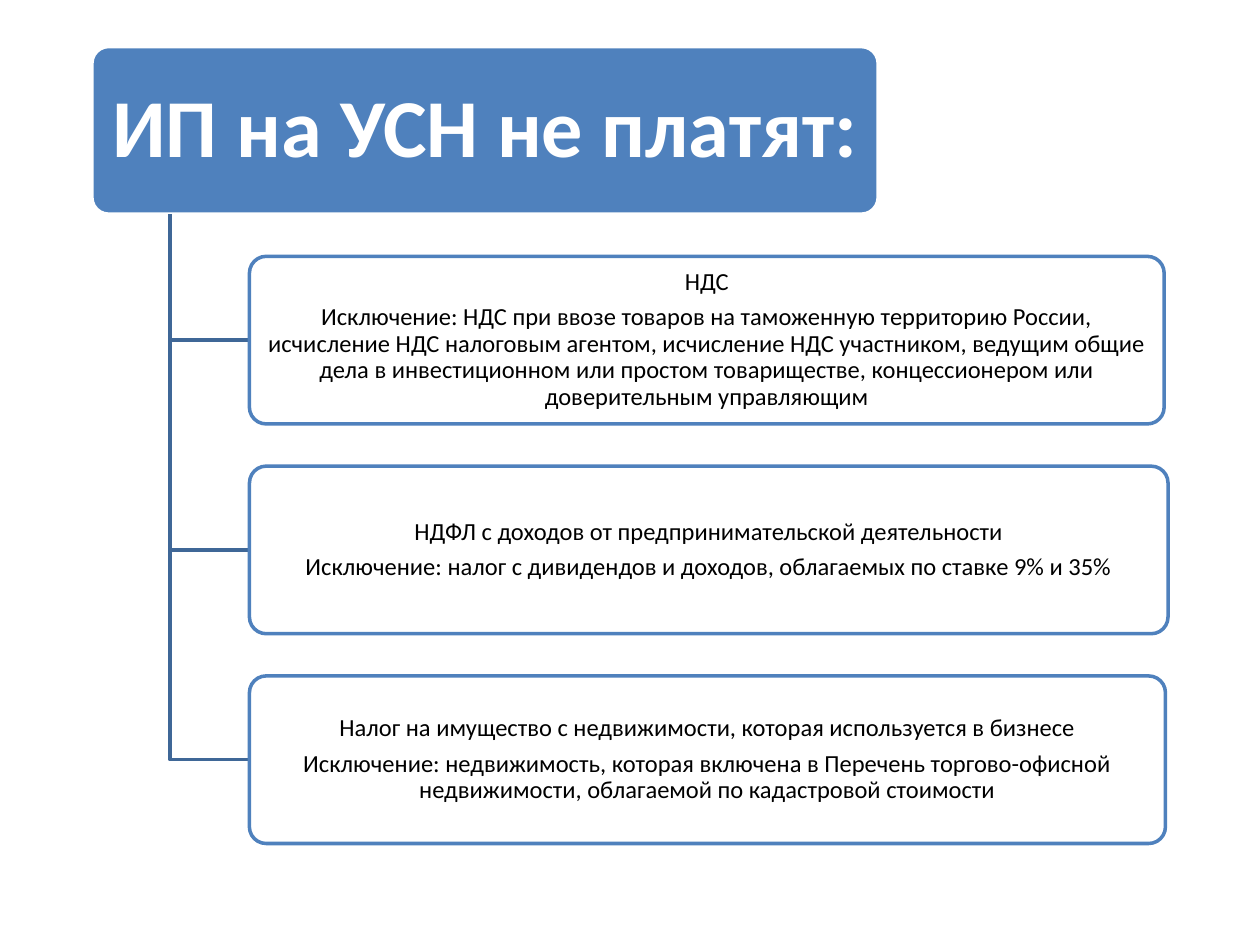
from pptx import Presentation
from pptx.dml.color import RGBColor
from pptx.enum.shapes import MSO_SHAPE
from pptx.enum.text import MSO_ANCHOR, MSO_AUTO_SIZE, PP_ALIGN
from pptx.util import Inches, Pt

BLUE = RGBColor(0x4F, 0x81, 0xBD)
DARK_BLUE = RGBColor(0x3F, 0x67, 0x97)
WHITE = RGBColor(0xFF, 0xFF, 0xFF)
BLACK = RGBColor(0, 0, 0)

HEADER_LEFT, HEADER_TOP, HEADER_WIDTH = 0.73, 0.37, 6.24
CARD_HEIGHT = 1.33
CARD_STEP = 1.665
CARD_LEFT = 1.98
TRUNK_LEFT = 1.35
TEXT_GAP = 0.04

TAXES = [
    (7.26, "НДС",
     "Исключение: НДС при ввозе товаров на таможенную территорию России, "
     "исчисление НДС налоговым агентом, исчисление НДС участником, ведущим общие "
     "дела в инвестиционном или простом товариществе, концессионером или "
     "доверительным управляющим"),
    (7.29, "НДФЛ с доходов от предпринимательской деятельности",
     "Исключение: налог с дивидендов и доходов, облагаемых по ставке 9% и 35%"),
    (7.27, "Налог на имущество с недвижимости, которая используется в бизнесе",
     "Исключение: недвижимость, которая включена в Перечень торгово-офисной "
     "недвижимости, облагаемой по кадастровой стоимости"),
]


def write_text(frame, lines, size, color, bold=False, inset_x=0.03, inset_y=0.02):
    frame.word_wrap = True
    frame.auto_size = MSO_AUTO_SIZE.NONE
    frame.vertical_anchor = MSO_ANCHOR.MIDDLE
    frame.margin_left = frame.margin_right = Inches(inset_x)
    frame.margin_top = frame.margin_bottom = Inches(inset_y)
    for index, line in enumerate(lines):
        para = frame.add_paragraph() if index else frame.paragraphs[0]
        para.alignment = PP_ALIGN.CENTER
        para.line_spacing = 0.9
        para.space_before = Pt(0)
        para.space_after = Pt(round(size * 0.35))
        span = para.add_run()
        span.text = line
        span.font.name = "Calibri"
        span.font.size = Pt(size)
        span.font.bold = bold
        span.font.color.rgb = color


def add_card(page, left, top, width, fill, line):
    card = page.shapes.add_shape(MSO_SHAPE.ROUNDED_RECTANGLE, Inches(left),
                                 Inches(top), Inches(width), Inches(CARD_HEIGHT))
    card.adjustments[0] = 0.1
    card.shadow.inherit = False
    card.fill.solid()
    card.fill.fore_color.rgb = fill
    card.line.color.rgb = line
    card.line.width = Pt(2)
    return card


def add_header(page, text):
    """Put the title placeholder on top of a filled card."""
    card = add_card(page, HEADER_LEFT, HEADER_TOP, HEADER_WIDTH, BLUE, WHITE)
    title = page.shapes.title
    card.element.addnext(title.element)
    title.left = Inches(HEADER_LEFT + TEXT_GAP)
    title.top = Inches(HEADER_TOP + TEXT_GAP)
    title.width = Inches(HEADER_WIDTH - 2 * TEXT_GAP)
    title.height = Inches(CARD_HEIGHT - 2 * TEXT_GAP)
    write_text(title.text_frame, [text], 47, WHITE, bold=True,
               inset_x=0.1, inset_y=0.07)


def add_branch(page, middle):
    """Draw an elbow from the header down and right to a card's left side."""
    start = Inches(TRUNK_LEFT), Inches(HEADER_TOP + CARD_HEIGHT)
    builder = page.shapes.build_freeform(*start)
    builder.add_line_segments([(Inches(TRUNK_LEFT), Inches(middle)),
                               (Inches(CARD_LEFT), Inches(middle))], close=False)
    branch = builder.convert_to_shape()
    branch.shadow.inherit = False
    branch.fill.background()
    branch.line.color.rgb = DARK_BLUE
    branch.line.width = Pt(2)


def main():
    deck = Presentation()
    deck.slide_width, deck.slide_height = Inches(10), Inches(7.5)
    page = deck.slides.add_slide(deck.slide_layouts[5])
    add_header(page, "ИП на УСН не платят:")
    for row, (width, tax, exception) in enumerate(TAXES, start=1):
        top = HEADER_TOP + row * CARD_STEP
        add_branch(page, top + CARD_HEIGHT / 2)
        card = add_card(page, CARD_LEFT, top, width, WHITE, BLUE)
        write_text(card.text_frame, [tax, exception], 14, BLACK)
    deck.save("out.pptx")


if __name__ == "__main__":
    main()
